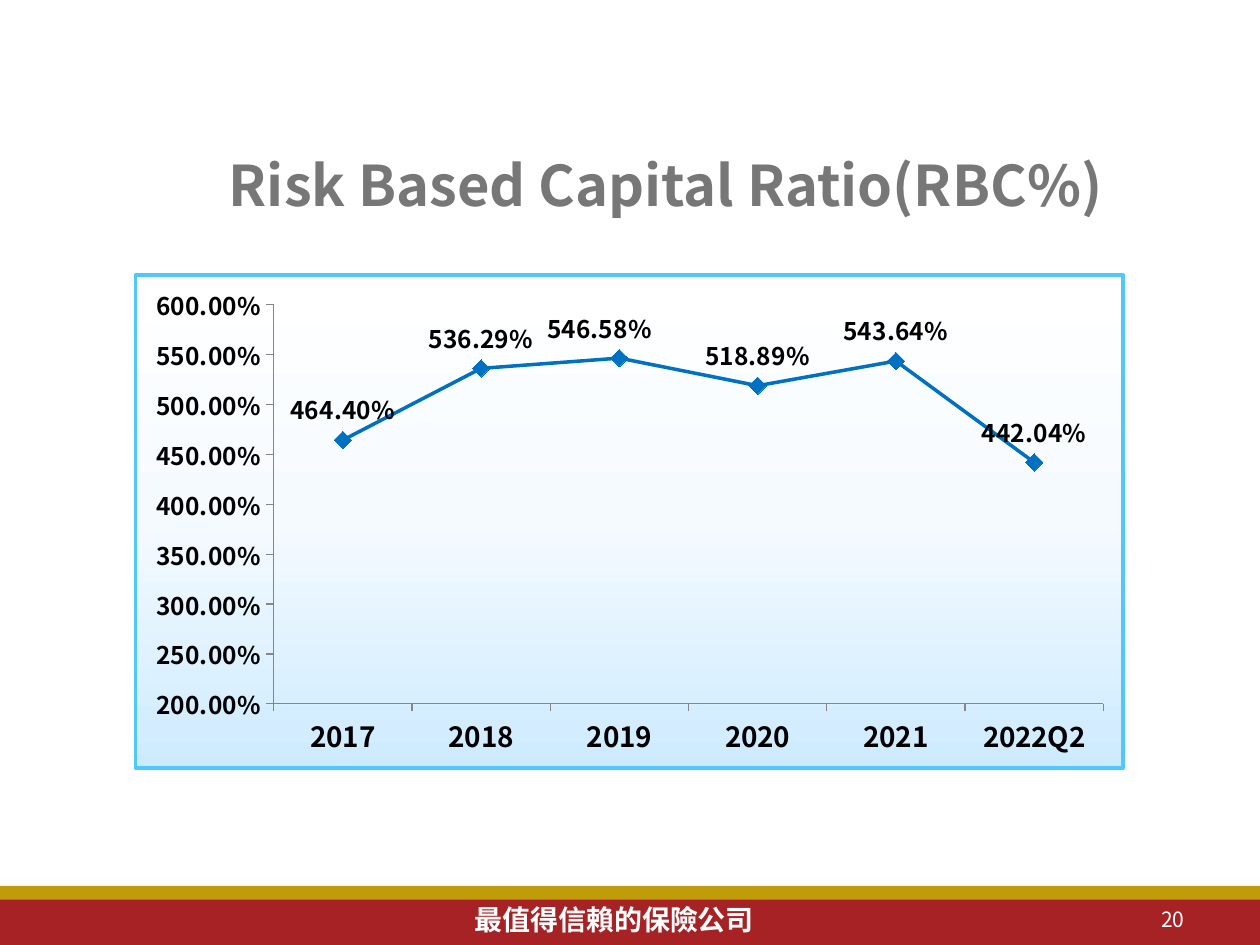
from dataclasses import dataclass

from pptx import Presentation
from pptx.chart.data import CategoryChartData
from pptx.dml.color import RGBColor
from pptx.enum.chart import XL_CHART_TYPE, XL_LABEL_POSITION, XL_MARKER_STYLE, XL_TICK_MARK
from pptx.enum.shapes import MSO_SHAPE
from pptx.enum.text import MSO_ANCHOR, PP_ALIGN
from pptx.oxml import parse_xml
from pptx.oxml.ns import nsdecls, qn
from pptx.util import Inches, Pt

FONT = "Noto Sans CJK SC"
COLORS = {
    "gold": "C09C0A", "red": "A72225", "white": "FFFFFF", "title": "777777",
    "line": "0070C0", "marker": "00B0F0", "border": "50C8FF", "axis": "868686",
    "black": "000000", "sky": "CDEBFF", "pale": "F5FAFF",
}
RATIOS = {
    "2017": 4.644, "2018": 5.3629, "2019": 5.4658,
    "2020": 5.1889, "2021": 5.4364, "2022Q2": 4.4204,
}


@dataclass
class Band:
    top: float
    height: float
    color: str


@dataclass
class Label:
    text: str
    left: float
    top: float
    width: float
    height: float
    size: int
    bold: bool
    align: PP_ALIGN


BANDS = [Band(7.03, 0.12, "gold"), Band(7.14, 0.36, "red")]
LABELS = [
    Label("最值得信賴的保險公司", 3.67, 7.11, 2.65, 0.37, 16, True, PP_ALIGN.JUSTIFY),
    Label("20", 7.17, 7.14, 2.33, 0.31, 12, False, PP_ALIGN.RIGHT),
]


def rgb(name: str) -> RGBColor:
    return RGBColor.from_string(COLORS[name])


def style_font(font, size: int, bold: bool, color: str) -> None:
    font.name, font.size, font.bold = FONT, Pt(size), bold
    font.color.rgb = rgb(color)


def write(frame, text: str, size: int, bold: bool, color: str, align: PP_ALIGN) -> None:
    frame.word_wrap = True
    frame.vertical_anchor = MSO_ANCHOR.MIDDLE
    para = frame.paragraphs[0]
    para.alignment = align
    span = para.add_run()
    span.text = text
    style_font(span.font, size, bold, color)
    span.font._element.append(parse_xml(f'<a:ea {nsdecls("a")} typeface="{FONT}"/>'))


def add_band(page, band: Band) -> None:
    box = page.shapes.add_shape(MSO_SHAPE.RECTANGLE, 0, Inches(band.top),
                                Inches(10), Inches(band.height))
    box.shadow.inherit = False
    box.fill.solid()
    box.fill.fore_color.rgb = rgb(band.color)
    box.line.fill.background()


def add_label(page, label: Label) -> None:
    box = page.shapes.add_textbox(Inches(label.left), Inches(label.top),
                                  Inches(label.width), Inches(label.height))
    write(box.text_frame, label.text, label.size, label.bold, "white", label.align)


def manual_layout(**values: float):
    target = '<c:layoutTarget val="inner"/>' if "w" in values else ""
    modes = "".join(f'<c:{key}Mode val="edge"/>' for key in "xy") if target else ""
    sizes = "".join(f'<c:{key} val="{value}"/>' for key, value in values.items())
    return parse_xml(f'<c:layout {nsdecls("c")}><c:manualLayout>{target}{modes}{sizes}'
                     '</c:manualLayout></c:layout>')


def style_chart_area(chart) -> None:
    stops = "".join(f'<a:gs pos="{place}"><a:srgbClr val="{COLORS[name]}"/></a:gs>'
                    for place, name in ((0, "sky"), (50000, "pale"), (100000, "white")))
    area = parse_xml(
        f'<c:spPr {nsdecls("c", "a")}><a:gradFill><a:gsLst>{stops}</a:gsLst>'
        '<a:lin ang="16200000" scaled="0"/></a:gradFill>'
        f'<a:ln w="{Pt(2.25)}"><a:solidFill><a:srgbClr val="{COLORS["border"]}"/>'
        '</a:solidFill></a:ln></c:spPr>')
    space = chart._chartSpace
    space.find(qn("c:chart")).addnext(area)
    plot_area = space.chart.plotArea
    for layout in plot_area.findall(qn("c:layout")):
        plot_area.remove(layout)
    plot_area.insert(0, manual_layout(x=0.14, y=0.06, w=0.84, h=0.81))


def style_axis(axis, size: int) -> None:
    axis.has_major_gridlines = False
    axis.major_tick_mark = XL_TICK_MARK.OUTSIDE
    axis.format.line.color.rgb = rgb("axis")
    style_font(axis.tick_labels.font, size, True, "black")


def style_series(series) -> None:
    series.smooth = False
    series.format.line.color.rgb = rgb("line")
    series.format.line.width = Pt(2)
    marker = series.marker
    marker.style, marker.size = XL_MARKER_STYLE.DIAMOND, 10
    marker.format.fill.solid()
    marker.format.fill.fore_color.rgb = rgb("line")
    marker.format.line.color.rgb = rgb("marker")
    labels = series.data_labels
    labels.show_value = True
    labels.position = XL_LABEL_POSITION.ABOVE
    labels.number_format, labels.number_format_is_linked = "0.00%", False
    style_font(labels.font, 14, True, "black")
    # The 2019 label sits a little to the left of its point
    peak = series.points[2].data_label
    peak.position = XL_LABEL_POSITION.ABOVE
    style_font(peak.font, 14, True, "black")
    index = series._element.xpath("c:dLbls/c:dLbl/c:idx")[0]
    index.addnext(manual_layout(x=-0.02, y=0))


def add_ratio_chart(page) -> None:
    data = CategoryChartData(number_format="0.00%")
    data.categories = list(RATIOS)
    data.add_series("Series 1", list(RATIOS.values()))
    chart = page.shapes.add_chart(XL_CHART_TYPE.LINE_MARKERS, Inches(1.06), Inches(2.17),
                                  Inches(7.87), Inches(3.94), data).chart
    chart.has_legend = chart.has_title = False
    chart.font.name, chart.font.size = "Calibri", Pt(18)
    chart.plots[0].vary_by_categories = False
    style_chart_area(chart)
    style_axis(chart.category_axis, 16)
    values = chart.value_axis
    style_axis(values, 14)
    values.minimum_scale, values.maximum_scale, values.major_unit = 2, 6, 0.5
    values.tick_labels.number_format = "0.00%"
    values.tick_labels.number_format_is_linked = False
    style_series(chart.plots[0].series[0])


def main() -> None:
    deck = Presentation()
    deck.slide_width, deck.slide_height = Inches(10), Inches(7.5)
    page = deck.slides.add_slide(deck.slide_layouts[5])

    # Footer
    for band in BANDS:
        add_band(page, band)
    for label in LABELS:
        add_label(page, label)

    # Title, centred a little to the right by its inset
    title = page.shapes.title
    title.left, title.top = Inches(0.5), Inches(0.99)
    title.width, title.height = Inches(9), Inches(0.94)
    title.text_frame.margin_left = Inches(0.67)
    write(title.text_frame, "Risk Based Capital Ratio(RBC%)", 32, True, "title",
          PP_ALIGN.CENTER)

    add_ratio_chart(page)
    deck.save("out.pptx")


if __name__ == "__main__":
    main()
